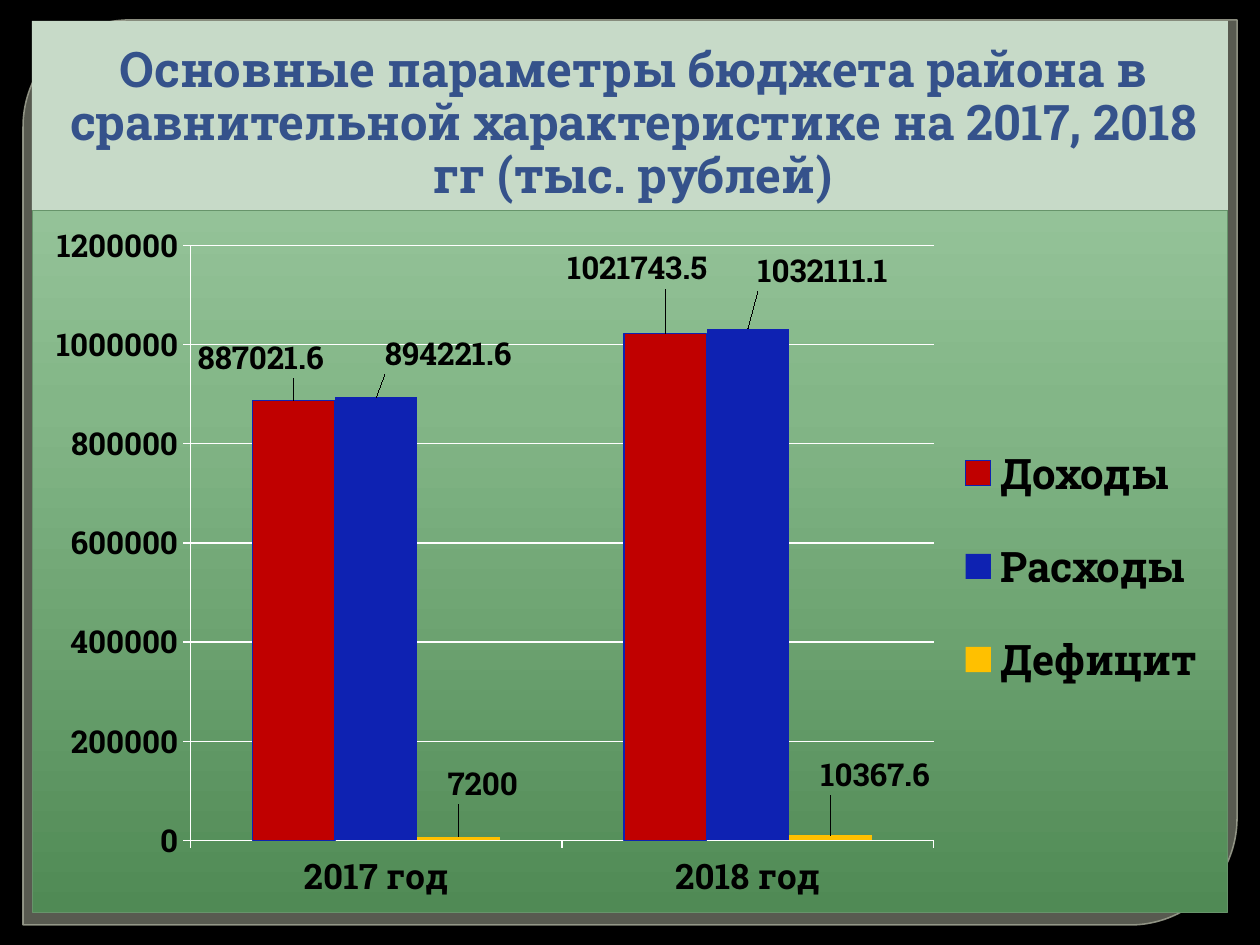
from dataclasses import dataclass

from lxml import etree
from pptx import Presentation
from pptx import util as u
from pptx.chart.data import CategoryChartData
from pptx.dml.color import RGBColor
from pptx.enum import chart as ch, shapes, text
from pptx.oxml import parse_xml
from pptx.oxml.ns import nsdecls, qn

PX = 914400 / 126


@dataclass
class Theme:
    font: str = "Roboto Slab"
    back: str = "000000"
    frame: str = "888B7B"
    frame_line: str = "9DA090"
    title_fill: str = "C7DAC8"
    title: str = "35528B"
    ink: str = "000000"
    grid: str = "FFFFFF"
    border: str = "67946B"
    bar_line: str = "0E22B2"
    title_size: int = 28
    legend_size: int = 24
    category_size: int = 20
    value_size: int = 18


theme = Theme()
rgb = RGBColor.from_string


def style(font, size, color):
    font.name = theme.font
    font.size = u.Pt(size)
    font.bold = True
    font.color.rgb = rgb(color)


def layout(**values):
    parts = "".join(f'<c:{k} val="{v}"/>' for k, v in values.items())
    return parse_xml(f'<c:layout {nsdecls("c")}><c:manualLayout>{parts}</c:manualLayout></c:layout>')


prs = Presentation()
prs.slide_width, prs.slide_height = round(1260 * PX), round(945 * PX)
s = prs.slides.add_slide(prs.slide_layouts[5])
s.background.fill.solid()
s.background.fill.fore_color.rgb = rgb(theme.back)

frame = s.shapes.add_shape(shapes.MSO_SHAPE.ROUND_2_DIAG_RECTANGLE,
                           *[round(n * PX) for n in (23, 20, 1214, 905)])
frame.adjustments[0] = 0.118
frame.adjustments[1] = 0
frame.shadow.inherit = False
frame.fill.solid()
frame.fill.fore_color.rgb = rgb(theme.frame)
frame.line.color.rgb = rgb(theme.frame_line)
frame.line.width = u.Pt(0.87)
for clr, alpha in zip(frame._element.spPr.iter(qn("a:srgbClr")), (65000, 88000)):
    etree.SubElement(clr, qn("a:alpha"), val=str(alpha))
s.shapes._spTree.insert(2, frame._element)

title = s.shapes.title
title.left, title.top, title.width, title.height = [round(n * PX) for n in (32, 21, 1196, 189)]
title.fill.solid()
title.fill.fore_color.rgb = rgb(theme.title_fill)
tf = title.text_frame
tf.text = "Основные параметры бюджета района в сравнительной характеристике на 2017, 2018 гг (тыс. рублей)"
tf.word_wrap = True
tf.auto_size = text.MSO_AUTO_SIZE.NONE
tf.vertical_anchor = text.MSO_ANCHOR.BOTTOM
p = tf.paragraphs[0]
p.alignment = text.PP_ALIGN.CENTER
p.line_spacing = 0.9
p._p.get_or_add_pPr().set("marL", str(round(7 * PX)))
style(p.runs[0].font, theme.title_size, theme.title)

budget = [
    ("Доходы", (887021.6, 1021743.5), "C00000", ((-33, -17), (-28, -40))),
    ("Расходы", (894221.6, 1032111.1), "0E22B2", ((72, -18), (75, -32))),
    ("Дефицит", (7200, 10367.6), "FFC000", ((24, -27), (45, -35))),
]
data = CategoryChartData()
data.categories = ["2017 год", "2018 год"]
for name, values, color, shifts in budget:
    data.add_series(name, values)

W, H = 1196, 703
chart = s.shapes.add_chart(ch.XL_CHART_TYPE.COLUMN_CLUSTERED,
                           *[round(n * PX) for n in (32, 210, W, H)], data).chart
chart.has_title = False
style(chart.font, theme.value_size, theme.ink)
plot = chart.plots[0]
plot.gap_width = 150
plot.overlap = 0
plot.vary_by_categories = False

for series, (name, values, color, shifts) in zip(plot.series, budget):
    series.invert_if_negative = False
    series.format.fill.solid()
    series.format.fill.fore_color.rgb = rgb(color)
    if name == "Доходы":
        series.format.line.color.rgb = rgb(theme.bar_line)
        series.format.line.width = u.Pt(0.75)
    for i, (dx, dy) in enumerate(shifts):
        label = series.points[i].data_label
        style(label.font, theme.value_size, theme.ink)
        label.position = ch.XL_LABEL_POSITION.OUTSIDE_END
        dLbl = series.data_labels._element.findall(qn("c:dLbl"))[i]
        dLbl.find(qn("c:idx")).addnext(layout(x=dx / W, y=dy / H))

for axis, size in ((chart.category_axis, theme.category_size), (chart.value_axis, theme.value_size)):
    style(axis.tick_labels.font, size, theme.ink)
    axis.major_tick_mark = ch.XL_TICK_MARK.OUTSIDE
    axis.format.line.color.rgb = rgb(theme.grid)
    axis.format.line.width = u.Pt(0.75)
axis = chart.value_axis
axis.minimum_scale, axis.maximum_scale, axis.major_unit = 0, 1200000, 200000
axis.major_gridlines.format.line.color.rgb = rgb(theme.grid)
axis.major_gridlines.format.line.width = u.Pt(0.75)

chart.has_legend = True
legend = chart.legend
legend.position = ch.XL_LEGEND_POSITION.RIGHT
legend.include_in_layout = False
style(legend.font, theme.legend_size, theme.ink)

area = chart._chartSpace.chart.plotArea
for old in area.findall(qn("c:layout")):
    area.remove(old)
area.insert(0, layout(layoutTarget="inner", xMode="edge", yMode="edge",
                      x=158 / W, y=35 / H, w=744 / W, h=596 / H))
for old in legend._element.findall(qn("c:layout")):
    legend._element.remove(old)
legend._element.find(qn("c:legendPos")).addnext(
    layout(xMode="edge", yMode="edge", x=922 / W, y=198 / H, w=256 / W, h=317 / H))

stops = "".join(f'<a:gs pos="{pos}000"><a:srgbClr val="{c}"/></a:gs>'
                for pos, c in ((0, "508A55"), (72, "83B687"), (100, "94C298")))
chart._chartSpace.chart.addnext(parse_xml(
    f'<c:spPr {nsdecls("c", "a")}><a:gradFill><a:gsLst>{stops}</a:gsLst>'
    f'<a:lin ang="16200000" scaled="0"/></a:gradFill><a:ln w="9525"><a:solidFill>'
    f'<a:srgbClr val="{theme.border}"/></a:solidFill></a:ln></c:spPr>'))

prs.save("out.pptx")
